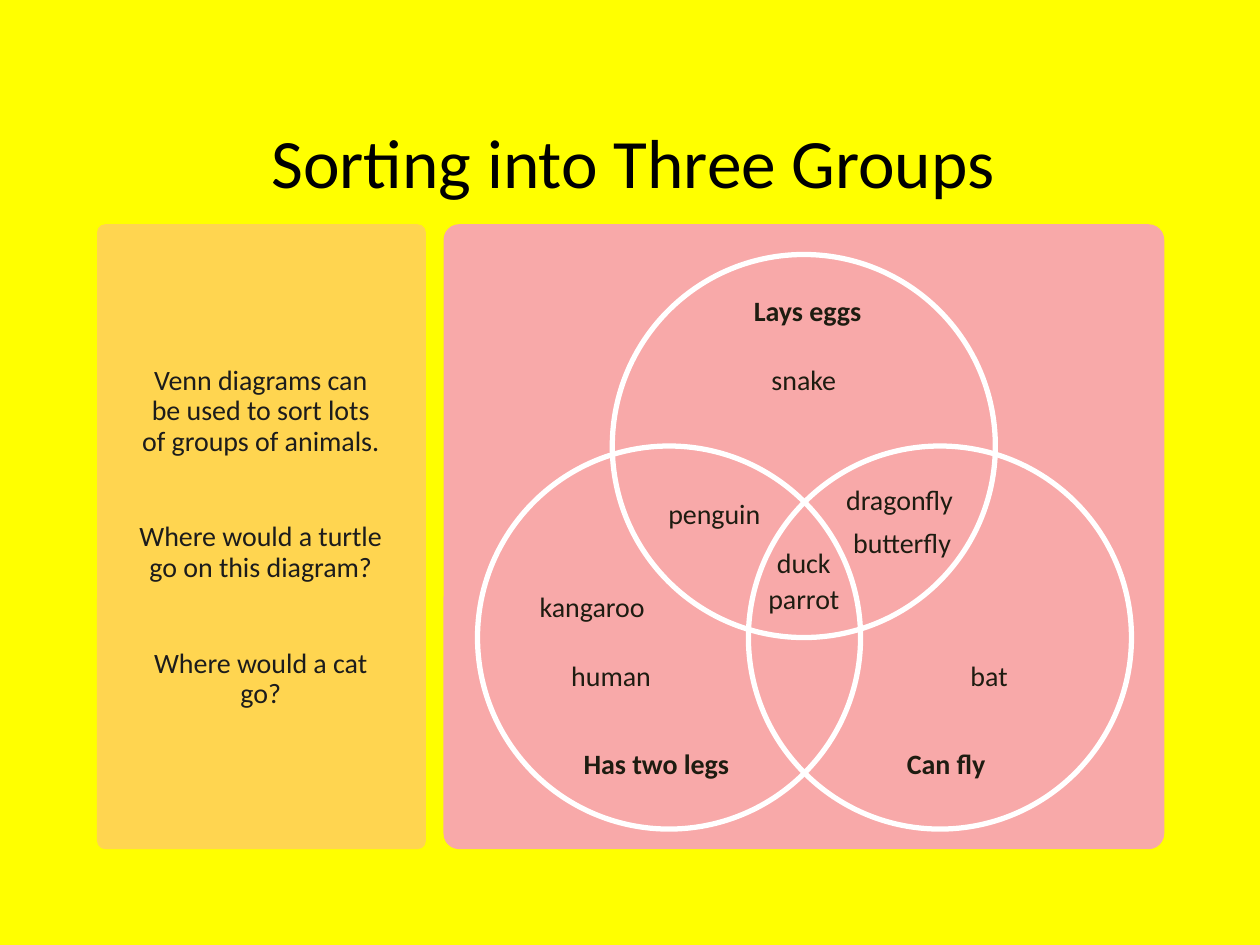
"""Build a slide with a three-circle Venn diagram of animals."""
from pptx import Presentation
from pptx.dml.color import RGBColor
from pptx.enum.shapes import MSO_SHAPE as SHAPE
from pptx.enum.text import MSO_ANCHOR as ANCHOR, PP_ALIGN as ALIGN
from pptx.util import Inches, Pt

COLORS = {
    "background": "FFFF00", "title": "000000", "venn": "F8A9A9", "note": "FFD550",
    "circle": "FFFFFF", "question": "1C1C1C", "label": "1E1C11",
}
FONT = "Calibri"

prs = Presentation()
prs.slide_width, prs.slide_height = Inches(10), Inches(7.5)
COL, ROW = prs.slide_width / 100, prs.slide_height / 75
slide = prs.slides.add_slide(prs.slide_layouts[5])
slide.background.fill.solid()
slide.background.fill.fore_color.rgb = RGBColor.from_string(COLORS["background"])


def place(left, top, width, height):
    return int(left * COL), int(top * ROW), int(width * COL), int(height * ROW)


def add_text(box, lines, color, bold=False, gap=10):
    tf = slide.shapes.add_textbox(*place(*box)).text_frame
    tf.word_wrap = True
    tf.text = "\n".join(lines)
    for p in tf.paragraphs:
        p.alignment, p.line_spacing = ALIGN.CENTER, 0.9
        p.space_before = Pt(gap)
        font = p.runs[0].font
        font.name, font.size, font.bold = FONT, Pt(16), bold
        font.color.rgb = RGBColor.from_string(COLORS[color])


panels = [("venn", 35.2, 57.2), ("note", 7.7, 26.1)]
for name, left, width in panels:
    s = slide.shapes.add_shape(SHAPE.ROUNDED_RECTANGLE, *place(left, 17.8, width, 49.6))
    s.adjustments[0] = 0.025
    s.shadow.inherit = False
    s.fill.solid()
    s.fill.fore_color.rgb = RGBColor.from_string(COLORS[name])
    s.line.fill.background()

title = slide.shapes.title
title.left, title.top, title.width, title.height = place(5.3, 9.3, 89.9, 6.9)
tf = title.text_frame
tf.text = "Sorting into Three Groups"
tf.vertical_anchor = ANCHOR.MIDDLE
p = tf.paragraphs[0]
p.alignment = ALIGN.CENTER
font = p.runs[0].font
font.name, font.size = FONT, Pt(39.6)
font.color.rgb = RGBColor.from_string(COLORS["title"])

questions = [
    "Venn diagrams can be used to sort lots of groups of animals.",
    "Where would a turtle go on this diagram?",
    "Where would a cat go?",
]
add_text((9.9, 28.6, 21.6, 32.2), questions, "question", gap=37.5)

RADIUS = 15.2
centers = [(63.8, 35.4), (74.6, 50.6), (53.1, 50.6)]
for x, y in centers:
    s = slide.shapes.add_shape(
        SHAPE.OVAL, *place(x - RADIUS, y - RADIUS, 2 * RADIUS, 2 * RADIUS))
    s.shadow.inherit = False
    s.fill.background()
    s.line.color.rgb = RGBColor.from_string(COLORS["circle"])
    s.line.width = Pt(3)

groups = [("Lays eggs", 64.1, 23.1), ("Has two legs", 52.1, 59.1), ("Can fly", 75.1, 59.1)]
animals = [
    ("snake", 63.8, 28.6), ("penguin", 56.7, 39.2), ("kangaroo", 47, 46.6),
    ("human", 48.5, 52.1), ("bat", 78.5, 52.1), ("parrot", 63.8, 46),
    ("duck", 63.8, 43.1), ("dragonfly", 71.4, 38.1), ("butterfly", 71.6, 41.5),
]
for labels, width, bold in [(groups, 21.6, True), (animals, 18.7, False)]:
    for text, center, top in labels:
        add_text((center - width / 2, top, width, 3.5), [text], "label", bold)

prs.save("out.pptx")
